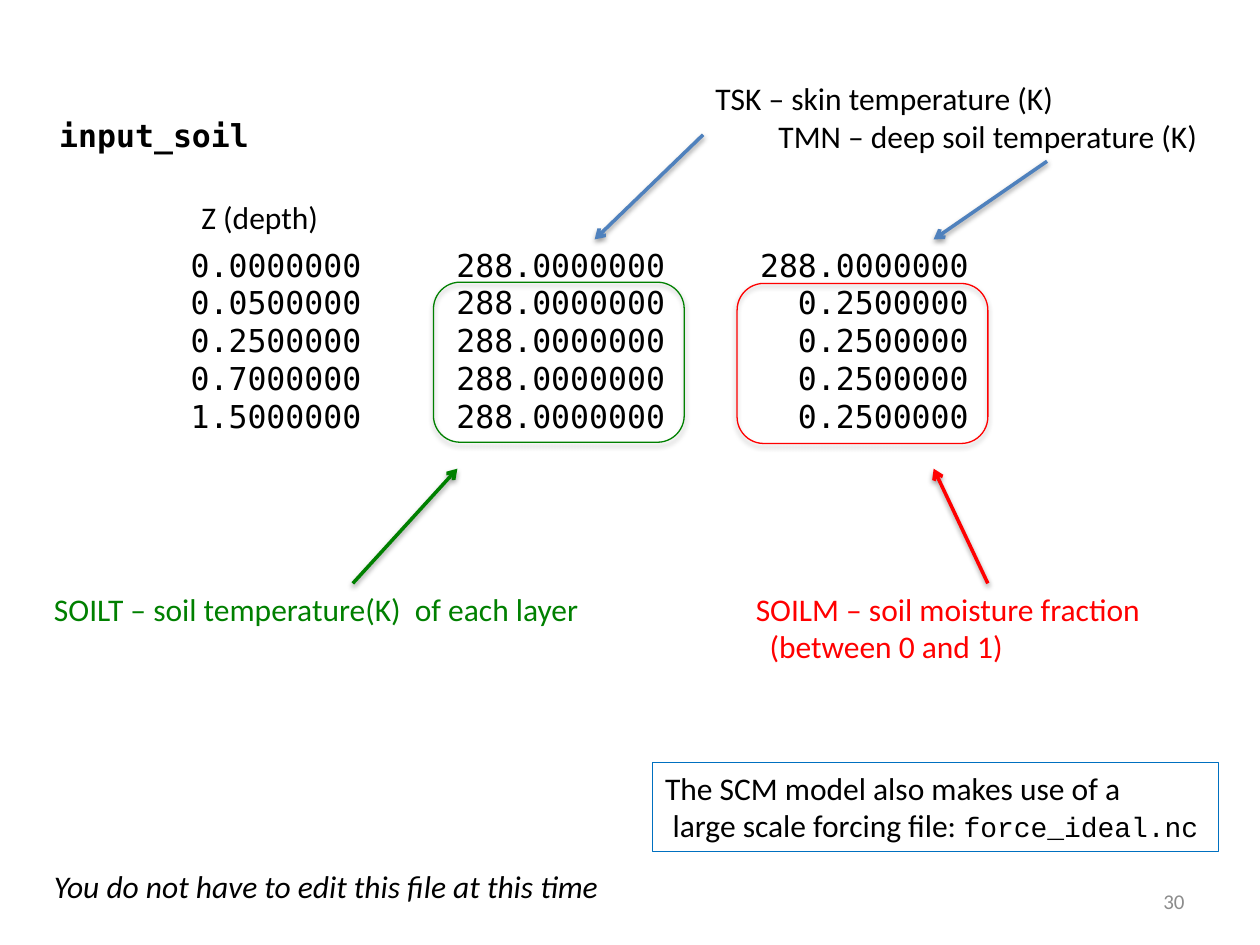
from typing import NamedTuple

from lxml import etree
from pptx import Presentation
from pptx import util as u
from pptx.dml.color import RGBColor
from pptx.enum import shapes, text
from pptx.oxml import ns

COLORS = {
    "black": "000000",
    "gray": "8C8C8C",
    "blue": "4F81BD",
    "green": "008000",
    "red": "FF0000",
    "frame": "0070C0",
}
SANS, MONO, CODE = "Calibri", "DejaVu Sans Mono", "Courier New"
CELL = 0.1  # the page is a grid of 100 columns by 75 rows
VALUE_TABS = [24.1 * number for number in (1, 2, 3)]
SOIL_ROWS = [
    ("0.0000000", "288.0000000", "288.0000000"),
    ("0.0500000", "288.0000000", "0.2500000"),
    ("0.2500000", "288.0000000", "0.2500000"),
    ("0.7000000", "288.0000000", "0.2500000"),
    ("1.5000000", "288.0000000", "0.2500000"),
]


class Area(NamedTuple):
    col: float
    row: float
    cols: float
    rows: float


class Span(NamedTuple):
    words: str
    font: str = SANS
    size: float = 18
    bold: bool = False
    italic: bool = False


class Line(NamedTuple):
    spans: list[Span]
    indent: float = 0


class Label(NamedTuple):
    area: Area
    lines: list[Line]
    color: str = "black"
    wrap: bool = False


class Arrow(NamedTuple):
    start: tuple[float, float]
    end: tuple[float, float]
    color: str


class Frame(NamedTuple):
    area: Area
    color: str


LABELS = [
    Label(Area(15, 15.2, 11.4, 4), [Line([Span("Z (depth)")])]),
    Label(Area(55.8, 5.8, 40.8, 7.1), [
        Line([Span("TSK – skin temperature (K)")]),
        Line([Span("TMN – deep soil temperature (K)")], indent=5),
    ]),
    Label(Area(3.3, 46.3, 44.5, 4),
          [Line([Span("SOILT – soil temperature(K)  of each layer")])], "green"),
    Label(Area(59, 46.3, 36, 7.1), [
        Line([Span("SOILM – soil moisture fraction")]),
        Line([Span("(between 0 and 1)")], indent=1.1),
    ], "red", wrap=True),
    Label(Area(3.3, 68.3, 46.1, 4),
          [Line([Span("You do not have to edit this file at this time", italic=True)])]),
]
NOTE = Label(Area(51.8, 60.5, 44.9, 7.1), [
    Line([Span("The SCM model also makes use of a")]),
    Line([Span("large scale forcing file: "), Span("force_ideal.nc", CODE, 16)], indent=0.6),
])
ARROWS = [
    Arrow((55.8, 10.7), (47.2, 19), "blue"),
    Arrow((83.1, 12.8), (74.1, 19), "blue"),
    Arrow((28, 46.3), (36.3, 37.2), "green"),
    Arrow((78.4, 46.3), (74.1, 37.2), "red"),
]
FRAMES = [
    Frame(Area(34.4, 22.4, 19.9, 12.7), "green"),
    Frame(Area(58.5, 22.5, 19.9, 12.7), "red"),
]


def cells(count: float) -> u.Length:
    return u.Inches(count * CELL)


def rgb(color: str) -> RGBColor:
    return RGBColor.from_string(COLORS[color])


def write_line(para, line: Line, color: str) -> None:
    if line.indent:
        para._p.get_or_add_pPr().set("marL", str(cells(line.indent)))
    for span in line.spans:
        run = para.add_run()
        run.text = span.words
        run.font.name, run.font.size = span.font, u.Pt(span.size)
        run.font.bold, run.font.italic = span.bold, span.italic
        run.font.color.rgb = rgb(color)


def write_lines(box, lines: list[Line], color: str, wrap: bool,
                align=text.PP_ALIGN.LEFT) -> None:
    frame = box.text_frame
    frame.word_wrap = wrap
    frame.auto_size = text.MSO_AUTO_SIZE.NONE
    frame.vertical_anchor = text.MSO_ANCHOR.TOP
    for number, line in enumerate(lines):
        para = frame.add_paragraph() if number else frame.paragraphs[0]
        para.alignment = align
        write_line(para, line, color)


def add_label(page, label: Label, align=text.PP_ALIGN.LEFT):
    box = page.shapes.add_textbox(*map(cells, label.area))
    write_lines(box, label.lines, label.color, label.wrap, align)
    return box


def add_shadow(shape, opacity: int, distance: float) -> None:
    """Put a soft shadow straight below a shape or connector."""
    effects = etree.SubElement(shape.element.spPr, ns.qn("a:effectLst"))
    shadow = etree.SubElement(
        effects, ns.qn("a:outerShdw"), blurRad=str(u.Pt(3.1)),
        dist=str(u.Pt(distance)), dir="5400000", rotWithShape="0")
    tint = etree.SubElement(shadow, ns.qn("a:srgbClr"), val=COLORS["black"])
    etree.SubElement(tint, ns.qn("a:alpha"), val=str(opacity * 1000))


def add_arrow(page, arrow: Arrow) -> None:
    line = page.shapes.add_connector(
        shapes.MSO_CONNECTOR.STRAIGHT, *map(cells, arrow.start + arrow.end))
    line.line.color.rgb = rgb(arrow.color)
    line.line.width = u.Pt(2)
    etree.SubElement(line.line._get_or_add_ln(), ns.qn("a:tailEnd"), type="arrow")
    add_shadow(line, 38, 1.6)


def add_outline(page, kind, area: Area, color: str):
    box = page.shapes.add_shape(kind, *map(cells, area))
    box.fill.background()
    box.line.color.rgb = rgb(color)
    box.line.width = u.Pt(0.75)
    return box


def add_soil_values(page) -> None:
    """Write the soil rows in one box, right-aligned on tab stops."""
    rows = [Line([Span("\t" + "\t".join(row), MONO)]) for row in SOIL_ROWS]
    box = add_label(page, Label(Area(3.6, 19, 74.7, 16.2), rows, wrap=True))
    for para in box.text_frame.paragraphs:
        para.line_spacing = u.Pt(21.6)
        stops = etree.SubElement(para._p.get_or_add_pPr(), ns.qn("a:tabLst"))
        for stop in VALUE_TABS:
            etree.SubElement(stops, ns.qn("a:tab"), pos=str(cells(stop)), algn="r")


def set_title(page) -> None:
    title = page.shapes.title
    title.left, title.top, title.width, title.height = map(cells, Area(3.7, 8.7, 17.2, 4))
    write_lines(title, [Line([Span("input_soil", MONO, bold=True)])], "black", False)


def main() -> None:
    deck = Presentation()
    deck.slide_width, deck.slide_height = cells(100), cells(75)
    page = deck.slides.add_slide(deck.slide_layouts[5])

    set_title(page)
    add_soil_values(page)
    for label in LABELS:
        add_label(page, label)
    for arrow in ARROWS:
        add_arrow(page, arrow)
    for frame in FRAMES:
        box = add_outline(page, shapes.MSO_SHAPE.ROUNDED_RECTANGLE, *frame)
        add_shadow(box, 35, 1.8)

    note = add_outline(page, shapes.MSO_SHAPE.RECTANGLE, NOTE.area, "frame")
    note.shadow.inherit = False
    write_lines(note, NOTE.lines, NOTE.color, NOTE.wrap)

    number = Label(Area(71.7, 69.5, 23.3, 4), [Line([Span("30", size=12)])], "gray", True)
    box = add_label(page, number, text.PP_ALIGN.RIGHT)
    box.text_frame.vertical_anchor = text.MSO_ANCHOR.MIDDLE

    deck.save("out.pptx")


if __name__ == "__main__":
    main()
